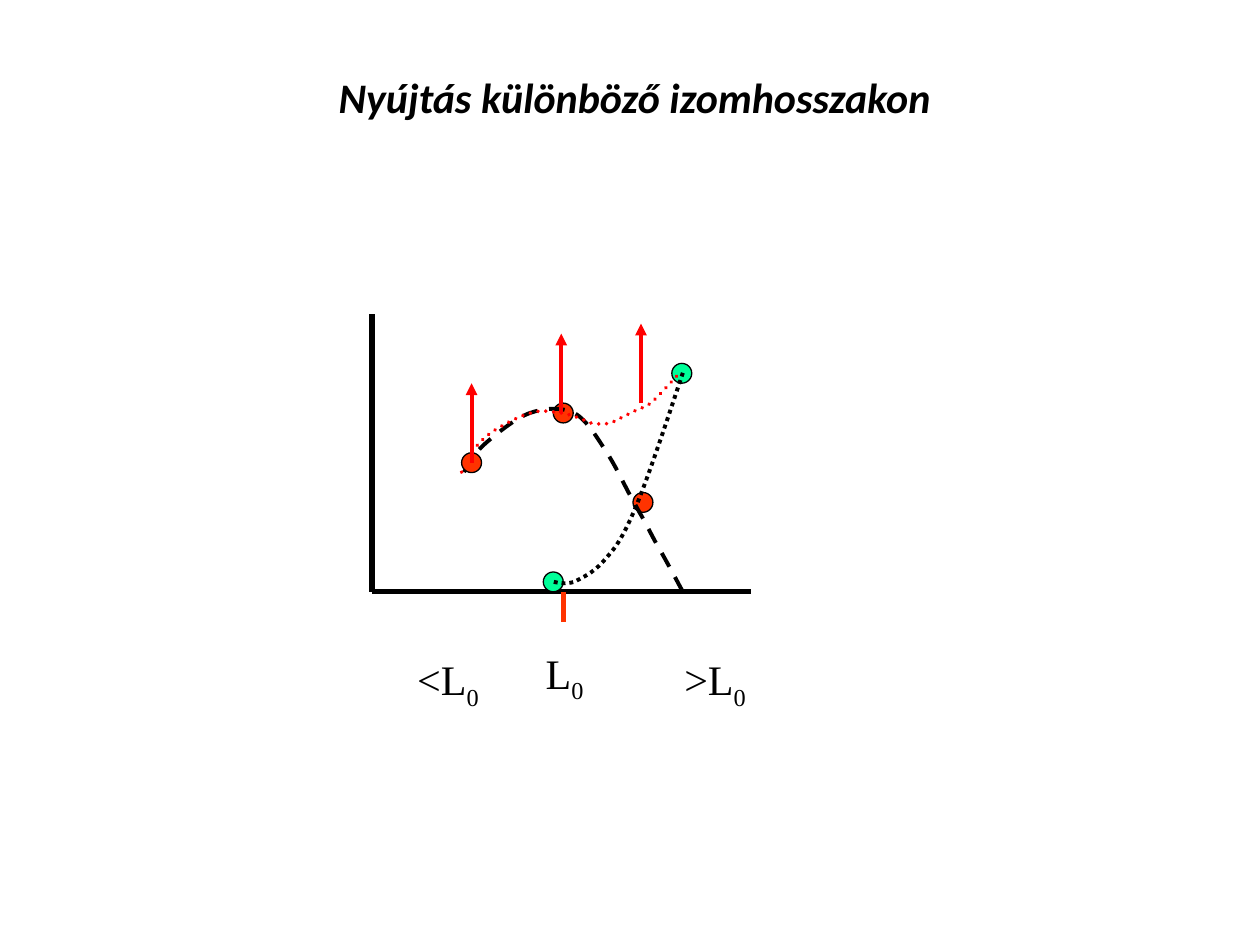
import dataclasses

import pptx
import pptx.dml.color
import pptx.enum.dml
import pptx.enum.shapes
import pptx.enum.text
import pptx.oxml.ns
import pptx.util
from lxml import etree

DASH = pptx.enum.dml.MSO_LINE_DASH_STYLE


@dataclasses.dataclass(frozen=True)
class Theme:
    black: str = "000000"
    orange: str = "FF3300"
    green: str = "00FF99"
    red: str = "FF0000"
    title_font: str = "Calibri"
    label_font: str = "Times New Roman"
    text_size: int = 24
    axis_width: float = 3
    curve_width: float = 2.25
    outline_width: float = 0.75


THEME = Theme()
COLUMNS, ROWS = 38, 28

# Bezier points as (column, row) from the origin of the axes, rows upward:
# a start, then two controls and an end for each stretch.
ACTIVE = [
    (9.25, 12.05), (9.75, 13.05), (10.4, 14.05), (11.4, 14.95),
    (12.55, 15.95), (14.45, 17.5), (15.85, 18), (17.25, 18.5), (19, 18.65), (20.3, 18),
    (21.55, 17.35), (22.7, 15.35), (23.55, 14.05), (24.45, 12.65), (25.2, 11.05), (25.75, 10),
    (26.35, 9), (26.25, 9), (26.85, 8), (27.4, 7.1), (28.25, 5.3), (29, 4.05),
    (29.8, 2.65), (30.8, 0.75), (31.2, 0),
]
PASSIVE = [
    (18.25, 1), (18.75, 0.9), (19.4, 0.75), (20.3, 1), (21.05, 1.4), (22.2, 1.9), (23.2, 3.05),
    (24.2, 4.2), (24.85, 4.8), (26.25, 8), (27.65, 11.15), (30.4, 19.65), (31.2, 22.05),
]
TOTAL = [
    (9, 12.05), (9.25, 12.65), (9.5, 13.45), (10, 14.05), (10.5, 14.7), (11.05, 15.35), (12.05, 16.1),
    (13.05, 16.75), (14.85, 17.75), (15.95, 18), (17.1, 18.4), (18, 18.1), (19, 18),
    (20, 17.85), (21.15, 17.35), (21.95, 17), (22.8, 16.85), (23.3, 16.85), (23.95, 17),
    (24.6, 17.25), (25.35, 17.75), (26, 18), (26.6, 18.4), (27.1, 18.4), (28, 19),
    (28.75, 19.65), (30.4, 21.55), (30.9, 22.05),
]


def color(value):
    return pptx.dml.color.RGBColor.from_string(value)


def style_line(line, value, width, dash=None):
    line.color.rgb = color(value)
    line.width = pptx.util.Pt(width)
    if dash:
        line.dash_style = dash


def add_run(paragraph, text, font_name, **flags):
    run = paragraph.add_run()
    run.text = text
    run.font.name = font_name
    run.font.size = pptx.util.Pt(THEME.text_size)
    run.font.color.rgb = color(THEME.black)
    for flag, value in flags.items():
        setattr(run.font, flag, value)
    return run


def bend_segments(shape):
    """Merge every three straight segments of a freeform into one cubic curve."""
    segments = list(shape._element.iter(pptx.oxml.ns.qn("a:lnTo")))
    for first in range(0, len(segments), 3):
        stretch = segments[first:first + 3]
        cubic = etree.Element(pptx.oxml.ns.qn("a:cubicBezTo"))
        stretch[0].addprevious(cubic)
        for segment in stretch:
            cubic.append(segment[0])
            segment.getparent().remove(segment)


class Plot:
    """Places parts by column and row, counted from the lower left of a box."""

    def __init__(self, slide, left, top, width, height):
        self.shapes = slide.shapes
        self.left, self.bottom = left, top + height
        self.column, self.row = width / COLUMNS, height / ROWS

    def position(self, point):
        return int(self.left + point[0] * self.column), int(self.bottom - point[1] * self.row)

    def line(self, start, end, value, width, arrow=False):
        connector = self.shapes.add_connector(
            pptx.enum.shapes.MSO_CONNECTOR.STRAIGHT, *self.position(start), *self.position(end))
        style_line(connector.line, value, width)
        if arrow:
            outline = connector.line._get_or_add_ln()
            etree.SubElement(outline, pptx.oxml.ns.qn("a:tailEnd"), type="triangle")
        etree.SubElement(connector._element.spPr, pptx.oxml.ns.qn("a:effectLst"))

    def marker(self, center, value):
        corner = (center[0] - 1, center[1] + 1)
        circle = self.shapes.add_shape(
            pptx.enum.shapes.MSO_SHAPE.OVAL, *self.position(corner),
            int(2 * self.column), int(2 * self.row))
        circle.shadow.inherit = False
        circle.fill.solid()
        circle.fill.fore_color.rgb = color(value)
        style_line(circle.line, THEME.black, THEME.outline_width)

    def curve(self, points, value, dash, cap="flat"):
        builder = self.shapes.build_freeform(*self.position(points[0]))
        builder.add_line_segments([self.position(point) for point in points[1:]], close=False)
        curve = builder.convert_to_shape()
        bend_segments(curve)
        curve.shadow.inherit = False
        curve.fill.background()
        style_line(curve.line, value, THEME.curve_width, dash)
        curve.line._get_or_add_ln().set("cap", cap)

    def label(self, corner, columns, text):
        box = self.shapes.add_textbox(
            *self.position(corner), int(columns * self.column), int(6.35 * self.row))
        box.text_frame.word_wrap = True
        paragraph = box.text_frame.paragraphs[0]
        add_run(paragraph, text, THEME.label_font)
        subscript = add_run(paragraph, "0", THEME.label_font)
        subscript.font._element.set("baseline", "-25000")


def add_title(slide, left, top, width, height):
    title = slide.shapes.title
    title.left, title.top, title.width, title.height = left, top, width, height
    frame = title.text_frame
    frame.word_wrap = True
    frame.auto_size = pptx.enum.text.MSO_AUTO_SIZE.NONE
    frame.vertical_anchor = pptx.enum.text.MSO_ANCHOR.TOP
    paragraph = frame.paragraphs[0]
    paragraph.alignment = pptx.enum.text.PP_ALIGN.CENTER
    add_run(paragraph, "Nyújtás különböző izomhosszakon", THEME.title_font, bold=True, italic=True)


def add_length_tension_plot(slide, left, top, width, height):
    plot = Plot(slide, left, top, width, height)
    for end in ((0, ROWS), (COLUMNS, 0)):
        plot.line((0, 0), end, THEME.black, THEME.axis_width)
    plot.line((19.25, -3), (19.25, 0), THEME.orange, THEME.axis_width)
    for corner, columns, text in (((3.3, -5.6), 11, "<L"), ((16.2, -4.95), 7, "L"), ((30.1, -5.6), 11, ">L")):
        plot.label(corner, columns, text)

    for center in ((19.2, 18), (27.2, 9)):
        plot.marker(center, THEME.orange)
    for center in ((18.2, 1), (31.1, 22)):
        plot.marker(center, THEME.green)
    plot.curve(ACTIVE, THEME.black, DASH.DASH)
    plot.curve(PASSIVE, THEME.black, DASH.ROUND_DOT)
    plot.curve(TOTAL, THEME.red, DASH.ROUND_DOT, cap="rnd")
    plot.marker((10, 13), THEME.orange)

    for column, row in ((10, 13), (19, 18), (27, 19)):
        plot.line((column, row), (column, row + 8), THEME.red, THEME.curve_width, arrow=True)


def main():
    presentation = pptx.Presentation()
    presentation.slide_width = pptx.util.Inches(10)
    presentation.slide_height = pptx.util.Inches(7.5)
    slide = presentation.slides.add_slide(presentation.slide_layouts[5])

    def box(left, top, width, height):
        """Turn percentages of the slide into lengths."""
        across, down = presentation.slide_width / 100, presentation.slide_height / 100
        return int(left * across), int(top * down), int(width * across), int(height * down)

    add_title(slide, *box(10.62, 6.93, 79.5, 6.67))
    add_length_tension_plot(slide, *box(29.52, 33.2, 30.05, 29.43))
    presentation.save("out.pptx")


if __name__ == "__main__":
    main()
